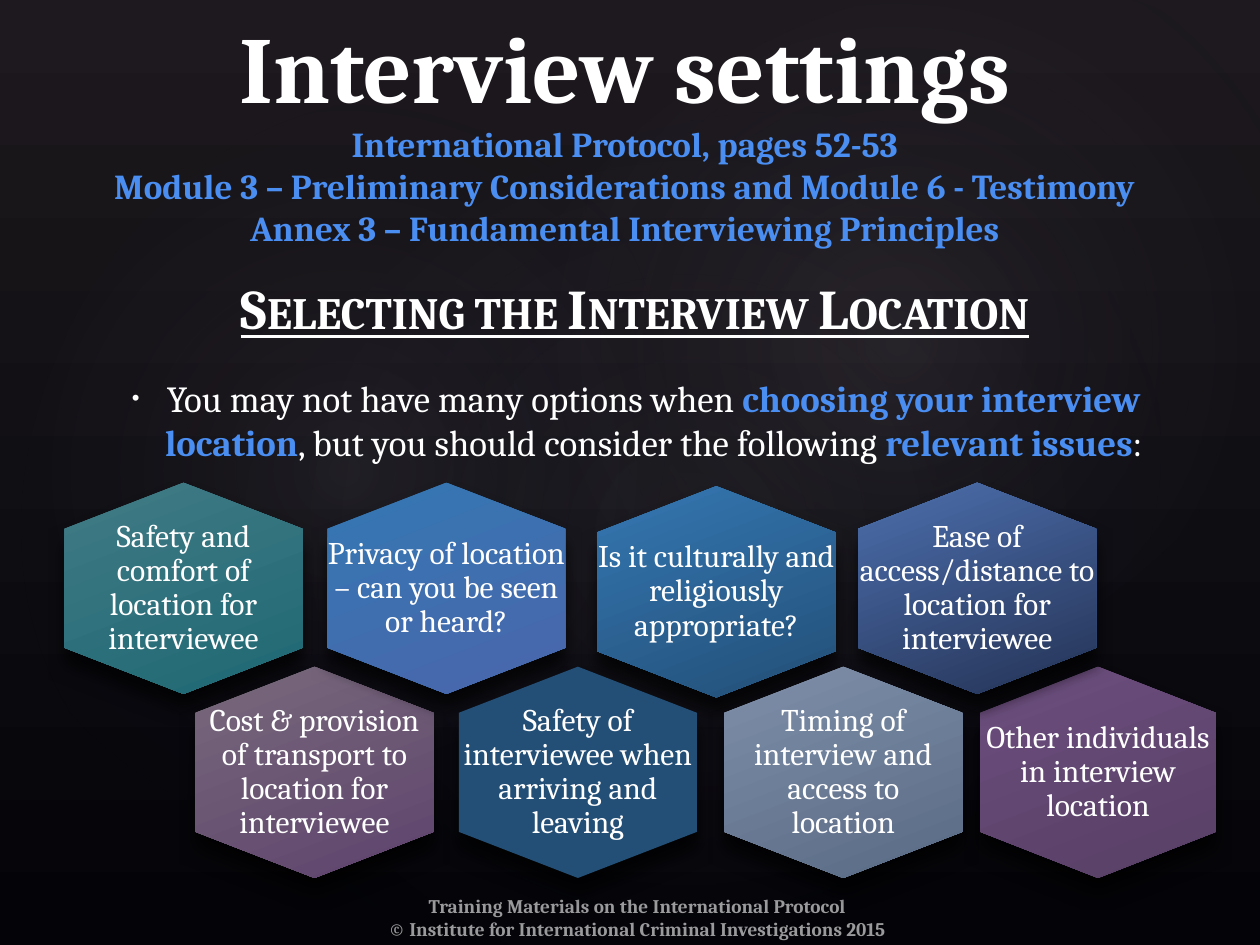
from lxml import etree
from pptx import Presentation
from pptx.enum import shapes, text
from pptx.oxml import ns
from pptx.util import Cm, Pt
from pptx.dml.color import RGBColor

FONT = "Cambria"
HUES = {
    "white": "FFFFFF", "blue": "4A8EF2", "top": "1D191E", "base": "040408",
    "glow": "C4BCC6", "navy": "242852", "shade": "000000",
}
GLOWS = [
    (3.81, 2.9, 20.12, 15.85, 328.7, 7),
    (-0.76, 3.25, 15.39, 12.45, 294.3, 8),
    (9.09, 0.33, 18.01, 13.21, 328.7, 8),
]
HEXES = [
    (19.76, 13.44, 4.75, 0.05, "6D4E7E", "573F65", "Other individuals in interview location"),
    (17.3, 9.73, 4.8, 0, "4C6FAD", "253356", "Ease of access/distance to location for interviewee"),
    (1.3, 9.73, 4.8, 0.1, "417B85", "1E6874", "Safety and comfort of location for interviewee"),
    (3.94, 13.44, 4.8, 0.1, "78697B", "5E436D", "Cost & provision of transport to location for interviewee"),
    (12.04, 9.8, 4.8, 0, "3477B2", "234F77", "Is it culturally and religiously appropriate?"),
    (6.6, 9.73, 4.8, 0, "3477B2", "4A66AC", "Privacy of location – can you be seen or heard?"),
    (9.25, 13.44, 4.8, 0, "234F77", "234F77", "Safety of interviewee when arriving and leaving"),
    (14.6, 13.44, 4.8, 0.2, "7F8FA9", "596A85", "Timing of interview and access to location"),
]


def rgb(hue):
    return RGBColor.from_string(hue)


def add(node, tag, **attrs):
    kid = etree.SubElement(node, ns.qn(tag))
    for key, val in attrs.items():
        kid.set(key, str(val))
    return kid


def blend(fill, first, last, angle):
    fill.gradient()
    fill.gradient_angle = angle
    for stop, hue, pos in zip(fill.gradient_stops, (first, last), (0, 1)):
        stop.color.rgb = rgb(hue)
        stop.position = pos


def style(run, size, hue="white", bold=False):
    font = run.font
    font.name, font.size, font.bold = FONT, Pt(size), bold
    font.color.rgb = rgb(HUES[hue])


def add_text(slide, box, anchor):
    frame = slide.shapes.add_textbox(*map(Cm, box)).text_frame
    frame.word_wrap = True
    frame.vertical_anchor = anchor
    return frame


def add_glow(slide, box, turn, alpha):
    oval = slide.shapes.add_shape(shapes.MSO_SHAPE.OVAL, *map(Cm, box))
    oval.rotation = turn
    oval.shadow.inherit = False
    oval.line.fill.background()
    blend(oval.fill, HUES["glow"], HUES["navy"], 0)
    grad = oval._element.spPr.find(ns.qn("a:gradFill"))
    stops = grad.findall(".//" + ns.qn("a:gs"))
    for stop, pos, part in zip(stops, (0, 58), (alpha, 0)):
        stop.set("pos", str(pos * 1000))
        add(stop[0], "a:alpha", val=part * 1000)
    grad.remove(grad.find(ns.qn("a:lin")))
    ring = add(grad, "a:path", path="circle")
    add(ring, "a:fillToRect", l=50000, t=50000, r=50000, b=50000)


def add_backdrop(slide):
    blend(slide.background.fill, HUES["top"], HUES["base"], 270)
    for *box, turn, alpha in GLOWS:
        add_glow(slide, box, turn, alpha)


def add_title(slide, box):
    para = add_text(slide, box, text.MSO_ANCHOR.BOTTOM).paragraphs[0]
    para.text = "\v".join([
        "Interview settings",
        "International Protocol, pages 52-53",
        "Module 3 – Preliminary Considerations and Module 6 - Testimony",
        "Annex 3 – Fundamental Interviewing Principles",
    ])
    para.alignment = text.PP_ALIGN.CENTER
    head, *rest = para.runs
    style(head, 54, bold=True)
    for run in rest:
        style(run, 20, "blue", True)


def add_body(slide, box):
    frame = add_text(slide, box, text.MSO_ANCHOR.MIDDLE)
    frame.text = "Selecting the Interview Location"
    head = frame.paragraphs[0]
    head.alignment = text.PP_ALIGN.CENTER
    head.space_before = Pt(6.4)
    run = head.runs[0]
    style(run, 32, bold=True)
    run.font.underline = True
    run.font._element.set("cap", "small")

    point = frame.add_paragraph()
    point.alignment = text.PP_ALIGN.CENTER
    point.space_before = Pt(20)
    props = point._p.get_or_add_pPr()
    props.set("marL", str(Cm(0.76)))
    props.set("indent", str(Cm(-0.71)))
    add(props, "a:buClr").append(etree.Element(ns.qn("a:srgbClr"), val=HUES["white"]))
    add(props, "a:buSzPct", val=60000)
    add(props, "a:buFont", typeface="Arial")
    add(props, "a:buChar", char="•")
    parts = [
        "You may not have many options when ",
        "choosing your interview location",
        ", but you should consider the following ",
        "relevant issues",
        ":",
    ]
    for spot, part in enumerate(parts):
        run = point.add_run()
        run.text = part
        key = spot % 2 == 1
        style(run, 21, "blue" if key else "white", key)


def add_hex(slide, box, pad, first, last, label):
    left, top, width, height = map(Cm, box)
    mid, right, base = left + width // 2, left + width, top + height
    edge = Cm(0.93)
    build = slide.shapes.build_freeform(mid, top)
    build.add_line_segments([
        (right, top + edge), (right, base - edge), (mid, base),
        (left, base - edge), (left, top + edge),
    ])
    tile = build.convert_to_shape()
    tile.line.fill.background()
    if first == last:
        tile.fill.solid()
        tile.fill.fore_color.rgb = rgb(first)
    else:
        blend(tile.fill, first, last, 291)
    tile.shadow.inherit = False
    effect = tile._element.spPr.find(ns.qn("a:effectLst"))
    cast = add(effect, "a:outerShdw", blurRad=Pt(9), dist=Pt(9), dir=5400000, rotWithShape=0)
    add(add(cast, "a:srgbClr", val=HUES["shade"]), "a:alpha", val=70000)
    frame = tile.text_frame
    frame.word_wrap = True
    frame.vertical_anchor = text.MSO_ANCHOR.MIDDLE
    frame.margin_left = frame.margin_right = Cm(pad)
    frame.margin_top = frame.margin_bottom = Cm(0.66)
    frame.text = label
    para = frame.paragraphs[0]
    para.alignment = text.PP_ALIGN.CENTER
    para.line_spacing = 0.9
    style(para.runs[0], 18)


def add_footer(slide, box):
    frame = add_text(slide, box, text.MSO_ANCHOR.TOP)
    frame.text = (
        "Training Materials on the International Protocol\n"
        "© Institute for International Criminal Investigations 2015"
    )
    for para in frame.paragraphs:
        para.alignment = text.PP_ALIGN.CENTER
        run = para.runs[0]
        style(run, 11, bold=True)
        hue = run.font._element.find(".//" + ns.qn("a:srgbClr"))
        add(hue, "a:alpha", val=60000)


def main():
    deck = Presentation()
    deck.slide_width, deck.slide_height = Cm(25.4), Cm(19.05)
    slide = deck.slides.add_slide(deck.slide_layouts[6])
    add_backdrop(slide)
    add_title(slide, (1.3, 0.33, 22.6, 4.8))
    add_footer(slide, (6.5, 17.9, 12.7, 1.02))
    add_body(slide, (0.9, 5.33, 23.8, 4.2))
    for left, top, width, *rest in HEXES:
        add_hex(slide, (left, top, width, 4.26), *rest)
    deck.save("out.pptx")


if __name__ == "__main__":
    main()
